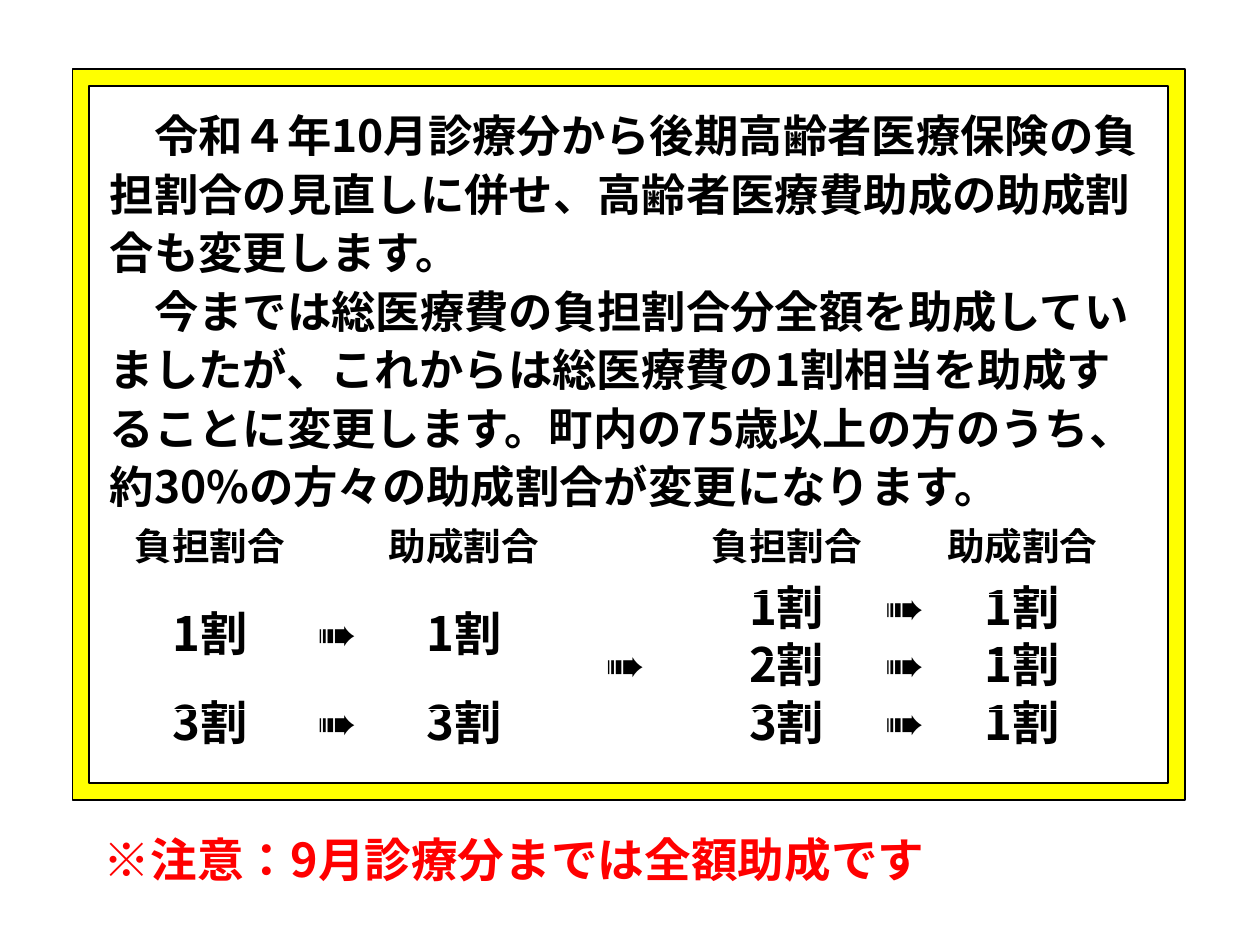
from dataclasses import dataclass

from lxml import etree
from pptx import Presentation
from pptx.dml.color import RGBColor
from pptx.enum import lang, shapes, text
from pptx.oxml import ns
from pptx.util import Inches, Pt


@dataclass(frozen=True)
class Theme:
    font: str = "Noto Sans CJK JP"
    ink: str = "000000"
    warning: str = "FF0000"
    band: str = "FFFF00"
    body_size: float = 36.6
    heading_size: float = 31
    rate_size: float = 39
    notice_size: float = 38.5


THEME = Theme()

EXPLANATION = [
    "　令和４年10月診療分から後期高齢者医療保険の負担割合の見直しに併せ、高齢者医療費助成の助成割合も変更します。",
    "　今までは総医療費の負担割合分全額を助成していましたが、これからは総医療費の1割相当を助成することに変更します。"
    "町内の75歳以上の方のうち、約30%の方々の助成割合が変更になります。",
]
NOTICE = "※注意：9月診療分までは全額助成です"

COLUMN_WIDTHS = [1.85, 1.06, 1.85, 1.85, 1.85, 0.85, 1.85]
ROW_HEIGHTS = [0.66, 0.71, 0.61, 0.71]
ARROW = "➠"
RATES = [
    ["負担割合", "", "助成割合", "", "負担割合", "", "助成割合"],
    ["1割", ARROW, "1割", "", "1割", ARROW, "1割"],
    ["", "", "", ARROW, "2割", ARROW, "1割"],
    ["3割", ARROW, "3割", "", "3割", ARROW, "1割"],
]
MERGED_COLUMNS = range(3)


def add_run(paragraph, words, size, color=THEME.ink):
    run = paragraph.add_run()
    run.text = words
    font = run.font
    font.name, font.size, font.bold = THEME.font, Pt(size), True
    font.language_id = lang.MSO_LANGUAGE_ID.JAPANESE
    font.color.rgb = RGBColor.from_string(color)
    latin = run._r.rPr.find(ns.qn("a:latin"))
    east_asian = etree.Element(ns.qn("a:ea"), typeface=THEME.font)
    latin.addnext(east_asian)


def set_margins(target, left, top, right, bottom):
    target.margin_left, target.margin_top = Inches(left), Inches(top)
    target.margin_right, target.margin_bottom = Inches(right), Inches(bottom)


def add_text_box(slide, left, top, width, height):
    """Add a wrapping text box and return its text frame."""
    box = slide.shapes.add_textbox(
        Inches(left), Inches(top), Inches(width), Inches(height))
    box.text_frame.word_wrap = True
    return box.text_frame


def add_explanation(slide):
    frame = add_text_box(slide, 1.16, 1.13, 12.13, 4.84)
    for index, words in enumerate(EXPLANATION):
        paragraph = frame.add_paragraph() if index else frame.paragraphs[0]
        paragraph.line_spacing = 1.1
        add_run(paragraph, words, THEME.body_size)


def fill_cell(cell, words, is_heading):
    cell.fill.background()
    if is_heading:
        set_margins(cell, 0, 0.23, 0, 0)
    else:
        set_margins(cell, 0.19, 0.15, 0.19, 0)
        cell.vertical_anchor = text.MSO_ANCHOR.MIDDLE
    paragraph = cell.text_frame.paragraphs[0]
    paragraph.alignment = text.PP_ALIGN.CENTER
    paragraph.line_spacing = Pt(12)
    if words:
        add_run(paragraph, words,
                THEME.heading_size if is_heading else THEME.rate_size)


def add_rate_table(slide):
    table = slide.shapes.add_table(
        len(ROW_HEIGHTS), len(COLUMN_WIDTHS), Inches(1.48), Inches(6.15),
        Inches(sum(COLUMN_WIDTHS)), Inches(sum(ROW_HEIGHTS))).table
    table.first_row = table.horz_banding = False
    for column, width in zip(table.columns, COLUMN_WIDTHS):
        column.width = Inches(width)
    for row, height in zip(table.rows, ROW_HEIGHTS):
        row.height = Inches(height)
    for column in MERGED_COLUMNS:
        table.cell(1, column).merge(table.cell(2, column))
    for row, rates in enumerate(RATES):
        for column, words in enumerate(rates):
            fill_cell(table.cell(row, column), words, is_heading=row == 0)


def add_notice(slide):
    frame = add_text_box(slide, 0.83, 9.31, 10.13, 1)
    set_margins(frame, 0.23, 0.15, 0.23, 0.15)
    frame.vertical_anchor = text.MSO_ANCHOR.MIDDLE
    paragraph = frame.paragraphs[0]
    paragraph.alignment = text.PP_ALIGN.CENTER
    paragraph.line_spacing = 1.1
    paragraph.space_before = Pt(5.8)
    add_run(paragraph, NOTICE, THEME.notice_size, THEME.warning)


def add_border(slide):
    border = slide.shapes.add_shape(
        shapes.MSO_SHAPE.FRAME,
        Inches(0.83), Inches(0.79), Inches(12.75), Inches(8.38))
    border.adjustments[0] = 0.023
    border.shadow.inherit = False
    border.fill.solid()
    border.fill.fore_color.rgb = RGBColor.from_string(THEME.band)
    border.line.color.rgb = RGBColor.from_string(THEME.ink)
    border.line.width = Pt(1.5)


def main():
    deck = Presentation()
    deck.slide_width, deck.slide_height = Inches(14.44), Inches(10.83)
    slide = deck.slides.add_slide(deck.slide_layouts[6])
    add_explanation(slide)
    add_rate_table(slide)
    add_notice(slide)
    add_border(slide)
    deck.save("out.pptx")


if __name__ == "__main__":
    main()
